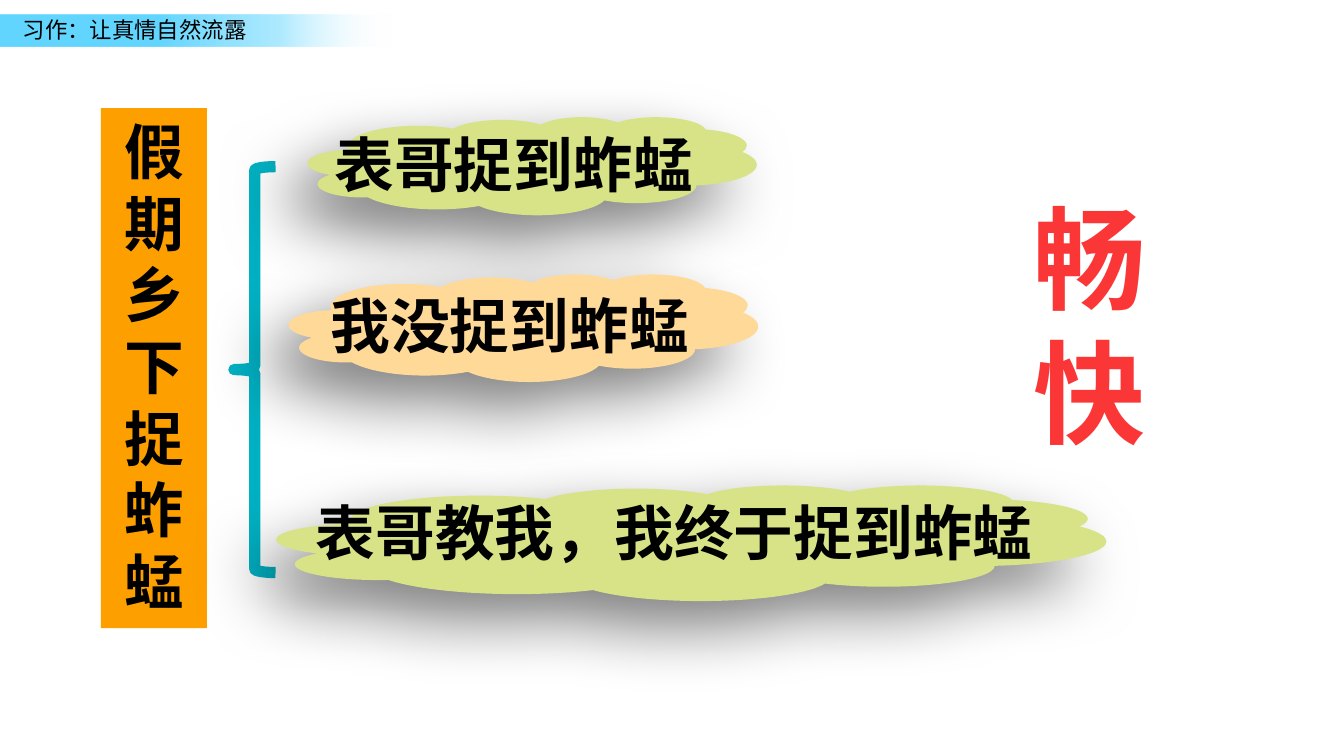
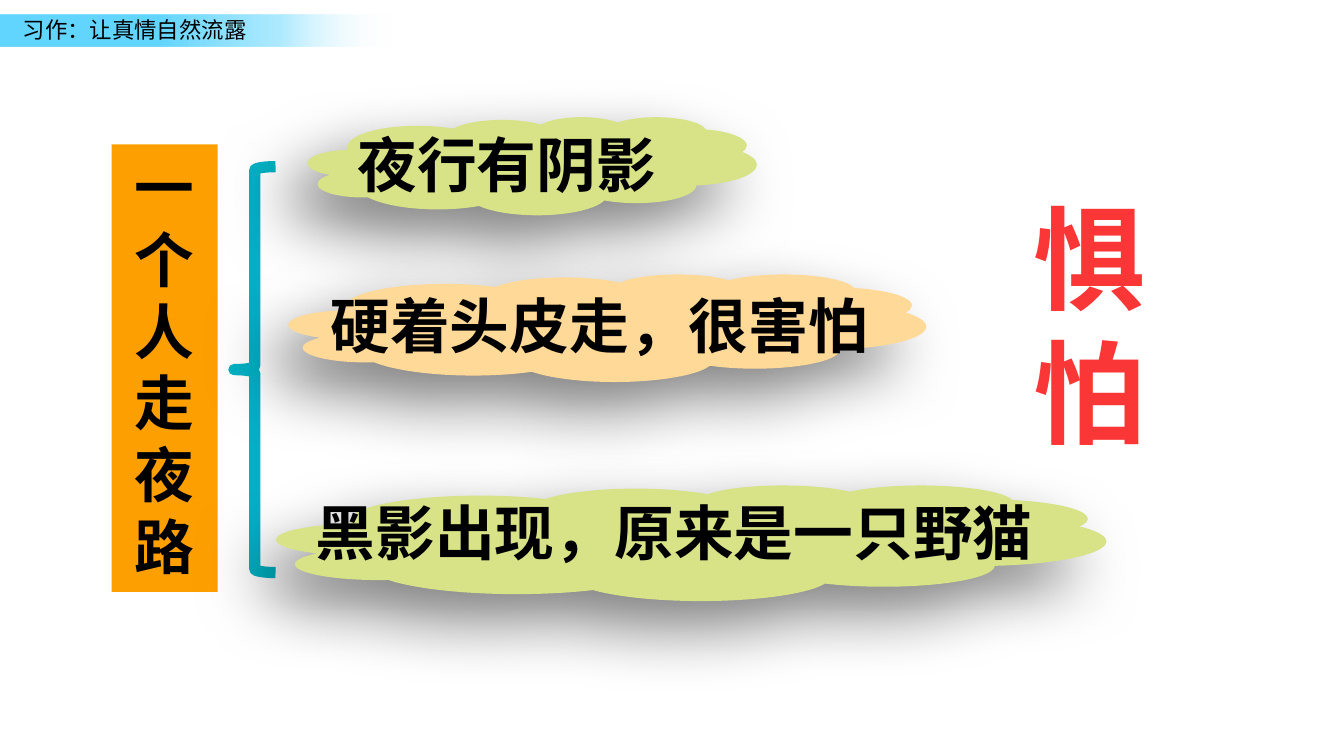
"""Builds two mind-map slides that outline a composition lesson."""
from pptx import Presentation
from pptx.dml.color import RGBColor
from pptx.enum.shapes import MSO_SHAPE as SHAPE
from pptx.enum.text import MSO_ANCHOR as ANCHOR, MSO_AUTO_SIZE as AUTO, PP_ALIGN as ALIGN
from pptx.oxml import parse_xml
from pptx.oxml.ns import nsdecls, qn
from pptx.util import Inches, Pt

LESSON = "习作：让真情自然流露"
SLIDES = [
    {"topic": "假期乡下捉蚱蜢", "topic_left": 0.75, "feeling": "畅快",
     "events": [("表哥捉到蚱蜢", 3.34, 2.39, 3.08),
                ("我没捉到蚱蜢", 3.49, 2.36, 3.64),
                ("表哥教我，我终于捉到蚱蜢", 6.17, 2.25, 5.87)]},
    {"topic": "一个人走夜路", "topic_left": 0.83, "feeling": "惧怕",
     "events": [("夜行有阴影", 3.34, 2.56, 2.91),
                ("硬着头皮走，很害怕", 4.74, 2.36, 4.53),
                ("黑影出现，原来是一只野猫", 6.17, 2.25, 5.87)]},
]
COLORS = {"text": "000000", "topic": "FE9F00", "brace": "00B1C3",
          "green": "D8E287", "peach": "FFD998", "shadow": "000000"}
CLOUDS = [(2.29, 0.87, 0.73, 0.90, "green"),
          (2.15, 2.04, 0.80, 2.10, "peach"),
          (2.06, 3.61, 0.86, 3.64, "green")]
BAND_STOPS = [(40, "63D6FF", 100), (70, "97E4FF", 76), (97, "FFFFFF", 0)]
FEELING_STOPS = [(0, "FFA3A3", 100), (75, "FB3636", 100), (100, "F21616", 100)]
FONT = "Noto Sans CJK SC"
LINE_RATIO = 1.2
TOPIC_CENTER, TOPIC_PITCH, TOPIC_PAD = 2.74, 0.54, 0.09


def rgb(name):
    return RGBColor.from_string(COLORS[name])


def set_gradient(parent, stops, angle):
    gs = "".join(f'<a:gs pos="{pos * 1000}"><a:srgbClr val="{color}">'
                 f'<a:alpha val="{alpha * 1000}"/></a:srgbClr></a:gs>'
                 for pos, color, alpha in stops)
    fill = parse_xml(f'<a:gradFill {nsdecls("a")} rotWithShape="1"><a:gsLst>{gs}</a:gsLst>'
                     f'<a:lin ang="{angle * 60000}" scaled="0"/></a:gradFill>')
    parent.replace(parent.find(qn("a:noFill")), fill)


def add_shadow(sp):
    effects = sp._element.spPr.find(qn("a:effectLst"))
    effects.append(parse_xml(
        f'<a:outerShdw {nsdecls("a")} blurRad="{Pt(35)}" dist="{Pt(20)}" dir="{135 * 60000}" '
        f'algn="ctr" rotWithShape="0"><a:srgbClr val="{COLORS["shadow"]}">'
        '<a:alpha val="50000"/></a:srgbClr></a:outerShdw>'))


def add_shape(shapes, kind, box, fill=None):
    sp = shapes.add_shape(kind, *map(Inches, box))
    sp.shadow.inherit = False
    sp.line.fill.background()
    if fill:
        sp.fill.solid()
        sp.fill.fore_color.rgb = rgb(fill)
    else:
        sp.fill.background()
    return sp


def write(sp, lines, size, latin=FONT, bold=True, align=ALIGN.LEFT, wrap=True, stops=None):
    tf = sp.text_frame
    tf.word_wrap = wrap
    tf.auto_size = AUTO.SHAPE_TO_FIT_TEXT
    for i, line in enumerate(lines):
        p = tf.add_paragraph() if i else tf.paragraphs[0]
        p.text = line
        p.alignment = align
        p.line_spacing = Pt(size * LINE_RATIO)
        p.font.size = Pt(size)
        p.font.bold = bold
        p.font.name = latin
        props = p._p.pPr.find(qn("a:defRPr"))
        if stops:
            p.font.fill.background()
            set_gradient(props, stops, 90)
        else:
            p.font.color.rgb = rgb("text")
        props.find(qn("a:latin")).addnext(
            parse_xml(f'<a:ea {nsdecls("a")} typeface="{FONT}"/>'))


def add_text(shapes, box, lines, size, **style):
    write(shapes.add_textbox(*map(Inches, box)), lines, size, **style)


def add_header(shapes):
    band = add_shape(shapes, SHAPE.RECTANGLE, (-0.03, 0.11, 3.03, 0.24))
    set_gradient(band._element.spPr, BAND_STOPS, 0)
    add_text(shapes, (0.07, 0.07, 1.88, 0.3), [LESSON], 12, bold=False, wrap=False)


def add_topic(shapes, topic, left):
    height = TOPIC_PAD + TOPIC_PITCH * len(topic)
    sp = add_shape(shapes, SHAPE.RECTANGLE,
                   (left, TOPIC_CENTER - height / 2, 0.79, height), "topic")
    sp.text_frame.vertical_anchor = ANCHOR.TOP
    write(sp, [topic], 32, align=ALIGN.CENTER)


def add_brace(shapes):
    sp = add_shape(shapes, SHAPE.LEFT_BRACE, (1.74, 1.24, 0.31, 3.02))
    sp.line.color.rgb = rgb("brace")
    sp.line.width = Pt(6)


def add_event(shapes, cloud, event):
    left, top, height, text_top, fill = cloud
    text, width, text_left, text_width = event
    group = shapes.add_group_shape().shapes
    add_shadow(add_shape(group, SHAPE.CLOUD, (left, top, width, height), fill))
    add_text(group, (text_left, text_top, text_width, 0.64), [text], 32)


def main():
    prs = Presentation()
    prs.slide_width = Inches(10)
    prs.slide_height = prs.slide_width * 9 // 16
    for content in SLIDES:
        shapes = prs.slides.add_slide(prs.slide_layouts[6]).shapes
        add_header(shapes)
        add_topic(shapes, content["topic"], content["topic_left"])
        add_brace(shapes)
        for cloud, event in zip(CLOUDS, content["events"]):
            add_event(shapes, cloud, event)
        add_text(shapes, (7.59, 1.36, 1.04, 2.12), content["feeling"], 60,
                 latin="Times New Roman", align=ALIGN.CENTER, wrap=False, stops=FEELING_STOPS)
    prs.save("out.pptx")


if __name__ == "__main__":
    main()
